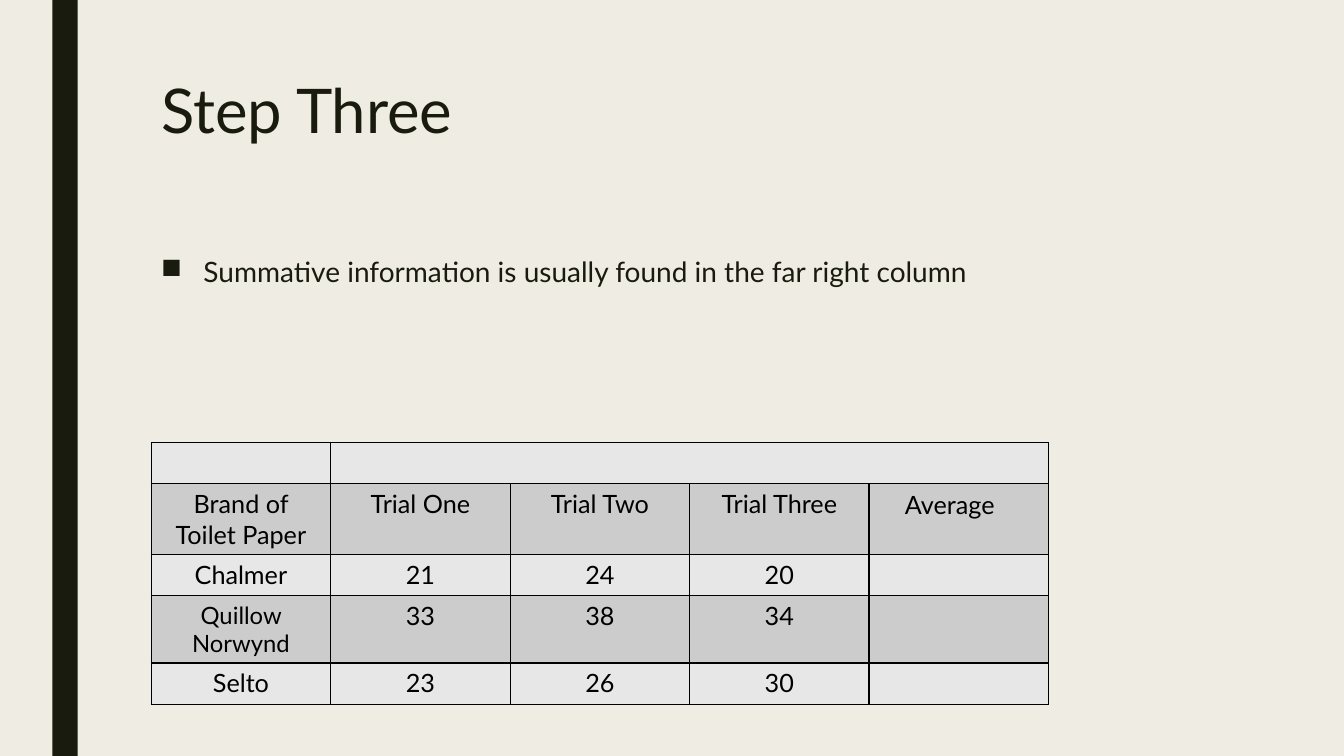
import pptx
import pptx.util
import pptx.dml.color
import pptx.enum.shapes
import pptx.enum.text
import pptx.oxml
import pptx.oxml.ns

RGB = pptx.dml.color.RGBColor
CREAM = RGB(0xEF, 0xED, 0xE3)
DARK = RGB(0x19, 0x1B, 0x0E)
BLACK = RGB(0, 0, 0)
LIGHT = RGB(0xE7, 0xE7, 0xE7)
GRAY = RGB(0xCC, 0xCC, 0xCC)

FONT = "Lato"
SCALE = 9144  # EMU in one px, 100 px to the inch
CENTER = pptx.enum.text.PP_ALIGN.CENTER


def px(size):
    return pptx.util.Emu(size * SCALE)


def node(tag, inner="", **attrs):
    extra = "".join(f' {key}="{val}"' for key, val in attrs.items())
    space = pptx.oxml.ns.nsdecls("a")
    return pptx.oxml.parse_xml(f"<a:{tag} {space}{extra}>{inner}</a:{tag}>")


class Deck:
    def __init__(self, width, height):
        self.show = pptx.Presentation()
        self.show.slide_width, self.show.slide_height = px(width), px(height)
        self.slide = self.show.slides.add_slide(self.show.slide_layouts[6])
        fill = self.slide.background.fill
        fill.solid()
        fill.fore_color.rgb = CREAM

    def style(self, para, size, color):
        for run in para.runs:
            run.font.name = FONT
            run.font.size = pptx.util.Pt(size)
            run.font.color.rgb = color

    def bar(self, *box):
        kind = pptx.enum.shapes.MSO_SHAPE.RECTANGLE
        shape = self.slide.shapes.add_shape(kind, *map(px, box))
        shape.shadow.inherit = False
        shape.fill.solid()
        shape.fill.fore_color.rgb = DARK
        shape.line.fill.background()

    def text(self, words, box, size, color=DARK, align=None, lead=None):
        frame = self.slide.shapes.add_textbox(*map(px, box)).text_frame
        frame.word_wrap = True
        frame.text = words
        para = frame.paragraphs[0]
        para.alignment = align
        para.line_spacing = lead
        self.style(para, size, color)
        return para

    def bullet(self, words, box, size, lead):
        para = self.text(words, box, size, lead=lead)
        para.space_before = pptx.util.Pt(10)
        para.space_after = pptx.util.Pt(2)
        props = para._p.get_or_add_pPr()
        props.set("marL", str(px(42)))
        props.set("indent", str(px(-42)))
        props.append(node("buChar", char="■"))

    def edge(self, cell):
        props = cell._tc.get_or_add_tcPr()
        ink = f'<a:solidFill><a:srgbClr val="{BLACK}"/></a:solidFill>'
        for spot, side in enumerate("LRTB"):
            props.insert(spot, node("ln" + side, ink, w=pptx.util.Pt(1)))

    def table(self, rows, left, top, width, highs):
        box = map(px, (left, top, width, sum(highs)))
        grid = self.slide.shapes.add_table(len(rows), len(rows[0]), *box).table
        grid.first_row = grid.horz_banding = False
        for r, (row, high) in enumerate(zip(rows, highs)):
            grid.rows[r].height = px(high)
            for c, words in enumerate(row):
                cell = grid.cell(r, c)
                cell.fill.solid()
                cell.fill.fore_color.rgb = GRAY if r % 2 else LIGHT
                self.edge(cell)
                cell.text = words
                para = cell.text_frame.paragraphs[0]
                para.alignment = CENTER
                self.style(para, 17 if words == LONG else 18, BLACK)
        return grid


LONG = "Quillow Norwynd"
ROWS = [
    ["", "", "", "", ""],
    ["Brand of Toilet Paper", "Trial One", "Trial Two", "Trial Three", ""],
    ["Chalmer", "21", "24", "20", ""],
    [LONG, "33", "38", "34", ""],
    ["Selto", "23", "26", "30", ""],
]


def main():
    deck = Deck(1333, 750)

    # Side bar, title and body
    deck.bar(52, 0, 25, 750)
    deck.text("Step Three", (150, 75, 1050, 162), 44, lead=0.89)
    deck.bullet("Summative information is usually found in the far right column",
                (150, 250, 1050, 392), 20, 0.94)

    # Trials, with one wide cell over the number columns
    grid = deck.table(ROWS, 150, 439, 890, [41, 70, 41, 66, 41])
    grid.cell(0, 1).merge(grid.cell(0, 4))

    # Heading over the last column
    deck.text("Average", (859, 481, 166, 40), 18, BLACK, CENTER)

    deck.show.save("out.pptx")


if __name__ == "__main__":
    main()
